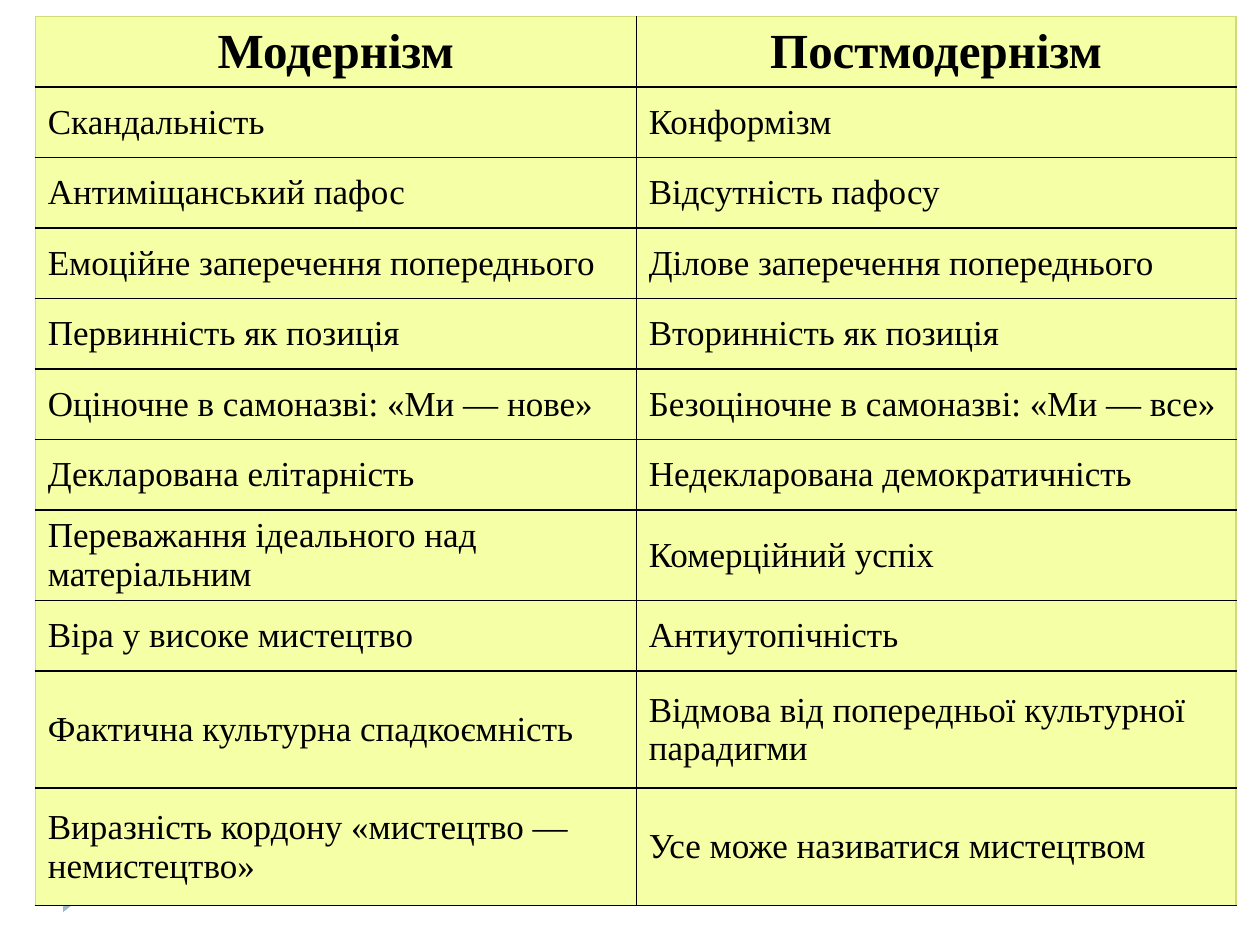
from lxml import etree
from pptx import Presentation
from pptx.dml.color import RGBColor
from pptx.enum import shapes, text
from pptx.oxml import ns
from pptx.util import Inches, Pt

BLACK = RGBColor(0x00, 0x00, 0x00)
OLIVE = RGBColor(0xD2, 0xDA, 0x7A)
LEMON = RGBColor(0xF5, 0xFF, 0xA6)
STEEL = RGBColor(0x9F, 0xB8, 0xCD)
FONT = "Times New Roman"
INNER = (BLACK, 1)
OUTER = (OLIVE, 0.75)

HEADINGS = ("Модернізм", "Постмодернізм")
# Each line break inside an entry starts a new paragraph
CONTRASTS = [
    ("Скандальність", "Конформізм"),
    ("Антиміщанський пафос", "Відсутність пафосу"),
    ("Емоційне заперечення попереднього", "Ділове заперечення попереднього"),
    ("Первинність як позиція", "Вторинність як позиція"),
    ("Оціночне в самоназві: «Ми — нове»", "Безоціночне в самоназві: «Ми — все»"),
    ("Декларована елітарність", "Недекларована демократичність"),
    ("Переважання ідеального над матеріальним", "Комерційний успіх"),
    ("Віра у високе мистецтво", "Антиутопічність"),
    ("Фактична культурна спадкоємність",
     "Відмова від попередньої культурної\nпарадигми"),
    ("Виразність кордону «мистецтво —\nнемистецтво»",
     "Усе може називатися мистецтвом"),
]
COLUMN_WIDTHS = (4.77, 4.76)
ROW_HEIGHTS = [0.56] * 9 + [0.93] * 2


def set_borders(cell, left, right, top, bottom):
    """Give each cell edge a (colour, points) line; call before filling."""
    properties = cell._tc.get_or_add_tcPr()
    for side, (color, points) in zip("LRTB", (left, right, top, bottom)):
        edge = etree.SubElement(properties, ns.qn(f"a:ln{side}"), w=str(Pt(points)))
        fill = etree.SubElement(edge, ns.qn("a:solidFill"))
        etree.SubElement(fill, ns.qn("a:srgbClr"), val=str(color))


def add_plain_table(slide, left, top, widths, heights):
    frame = slide.shapes.add_table(
        len(heights), len(widths), Inches(left), Inches(top),
        Inches(sum(widths)), Inches(sum(heights)))
    table = frame.table
    table.first_row = table.horz_banding = False
    for column, width in zip(table.columns, widths):
        column.width = Inches(width)
    for row, height in zip(table.rows, heights):
        row.height = Inches(height)
    return table


def write_cell(cell, wording, heading):
    cell.vertical_anchor = text.MSO_ANCHOR.MIDDLE
    for index, line in enumerate(wording.split("\n")):
        body = cell.text_frame
        paragraph = body.add_paragraph() if index else body.paragraphs[0]
        paragraph.alignment = text.PP_ALIGN.CENTER if heading else text.PP_ALIGN.LEFT
        run = paragraph.add_run()
        run.text = line
        run.font.name = FONT
        run.font.size = Pt(28 if heading else 20)
        run.font.bold = heading
        run.font.color.rgb = BLACK


def add_corner_marker(slide):
    marker = slide.shapes.add_shape(
        shapes.MSO_SHAPE.ISOSCELES_TRIANGLE,
        Inches(0.46), Inches(7.07), Inches(0.21), Inches(0.13))
    marker.rotation = 90
    marker.shadow.inherit = False
    marker.fill.solid()
    marker.fill.fore_color.rgb = STEEL
    marker.line.fill.background()


def add_backing_frame(slide):
    cell = add_plain_table(slide, 0.34, 0.32, [9.43], [6.84]).cell(0, 0)
    set_borders(cell, INNER, INNER, INNER, INNER)
    cell.fill.background()


def add_comparison(slide):
    table = add_plain_table(slide, 0.28, 0.13, COLUMN_WIDTHS, ROW_HEIGHTS)
    for r, pair in enumerate([HEADINGS, *CONTRASTS]):
        for c, wording in enumerate(pair):
            cell = table.cell(r, c)
            set_borders(cell,
                        left=INNER if c else OUTER,
                        right=OUTER if c else INNER,
                        top=INNER if r else OUTER,
                        bottom=INNER)
            cell.fill.solid()
            cell.fill.fore_color.rgb = LEMON
            write_cell(cell, wording, heading=r == 0)


def main():
    deck = Presentation()
    deck.slide_width, deck.slide_height = Inches(10), Inches(7.5)
    slide = deck.slides.add_slide(deck.slide_layouts[6])

    # Decoration behind the table
    add_corner_marker(slide)
    add_backing_frame(slide)

    # Modernism against postmodernism
    add_comparison(slide)

    deck.save("out.pptx")


if __name__ == "__main__":
    main()
